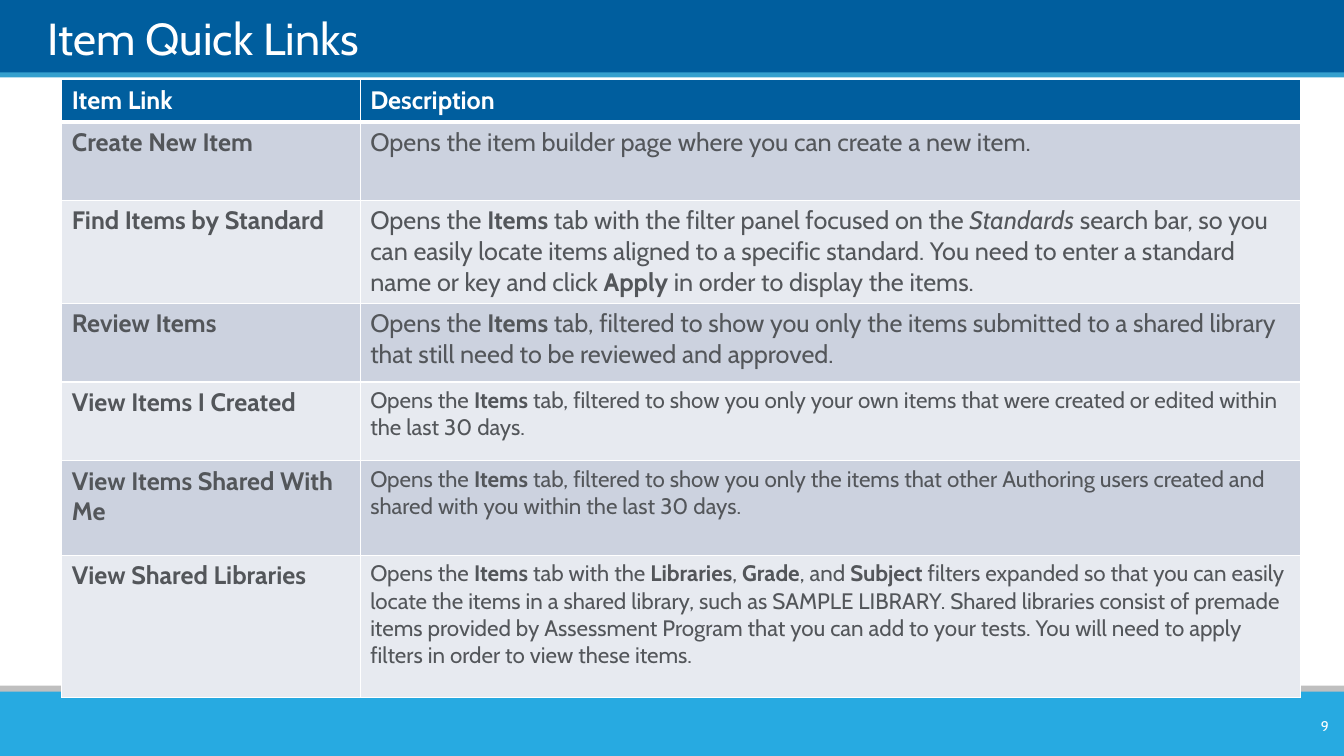
from dataclasses import dataclass

from lxml.etree import SubElement
from pptx import Presentation
from pptx.dml.color import RGBColor
from pptx.enum.shapes import MSO_SHAPE as Shape
from pptx.enum.text import MSO_ANCHOR as Anchor, MSO_AUTO_SIZE as AutoSize, PP_ALIGN as Align
from pptx.oxml.ns import qn
from pptx.util import Pt


@dataclass(frozen=True)
class Theme:
    font: str = "Cabin"
    white: str = "FFFFFF"
    navy: str = "005E9E"
    blue: str = "35A0CE"
    sky: str = "27AAE1"
    gray: str = "BFBFBF"
    ink: str = "53565A"
    row_fills: tuple[str, str] = ("CCD2DF", "E7EAF0")
    title: float = 32
    body: float = 18
    small: float = 16
    number: float = 10


@dataclass(frozen=True)
class Band:
    top: float
    height: float
    color: str


@dataclass(frozen=True)
class Span:
    text: str
    bold: bool = False
    italic: bool = False


@dataclass(frozen=True)
class LinkRow:
    name: str
    description: tuple[Span, ...]
    height: float
    size: float


T = Theme()
WIDTH, HEIGHT = 960, 540
COLUMNS = (213.1, 671.8)
HEADER_HEIGHT = 30.2
BANDS = (
    Band(-0.5, 54, T.navy),
    Band(51.7, 3.6, T.blue),
    Band(489.7, 10, T.gray),
    Band(494, 46, T.sky),
)
OPENS, ITEMS = Span("Opens the "), Span("Items", bold=True)
LINKS = (
    LinkRow("Create New Item", (
        Span("Opens the item builder page where you can create a new item."),
    ), 56.2, T.body),
    LinkRow("Find Items by Standard", (
        OPENS, ITEMS,
        Span(" tab with the filter panel focused on the "),
        Span("Standards", italic=True),
        Span(" search bar, so you can easily locate items aligned to a specific standard. "
             "You need to enter a standard name or key and click "),
        Span("Apply", bold=True),
        Span(" in order to display the items."),
    ), 73.4, T.body),
    LinkRow("Review Items", (
        OPENS, ITEMS,
        Span(" tab, filtered to show you only the items submitted to a shared library "
             "that still need to be reviewed and approved."),
    ), 56.2, T.body),
    LinkRow("View Items I Created", (
        OPENS, ITEMS,
        Span(" tab, filtered to show you only your own items that were created or edited "
             "within the last 30 days."),
    ), 56.2, T.small),
    LinkRow("View Items Shared With Me", (
        OPENS, ITEMS,
        Span(" tab, filtered to show you only the items that other Authoring users created "
             "and shared with you within the last 30 days."),
    ), 67.7, T.small),
    LinkRow("View Shared Libraries", (
        OPENS, ITEMS,
        Span(" tab with the "), Span("Libraries", bold=True),
        Span(", "), Span("Grade", bold=True),
        Span(", and "), Span("Subject", bold=True),
        Span(" filters expanded so that you can easily locate the items in a shared library, "
             "such as SAMPLE LIBRARY. Shared libraries consist of premade items provided by "
             "Assessment Program that you can add to your tests. You will need to apply "
             "filters in order to view these items."),
    ), 101.5, T.small),
)


def rgb(color: str) -> RGBColor:
    return RGBColor.from_string(color)


def write(p, text: str, *, size: float, color: str = T.white,
          bold: bool = False, italic: bool = False) -> None:
    r = p.add_run()
    r.text = text
    font = r.font
    font.name, font.size, font.bold, font.italic = T.font, Pt(size), bold, italic
    font.color.rgb = rgb(color)


def draw_band(s, band: Band) -> None:
    sp = s.shapes.add_shape(Shape.RECTANGLE, 0, Pt(band.top), Pt(WIDTH), Pt(band.height))
    sp.shadow.inherit = False
    sp.fill.solid()
    sp.fill.fore_color.rgb = rgb(band.color)
    sp.line.fill.background()


def draw_title(s, text: str) -> None:
    sp = s.shapes.title
    sp.element.getparent().append(sp.element)  # bring in front of the bands
    sp.left, sp.top, sp.width, sp.height = Pt(33.8), Pt(5), Pt(895), Pt(41)
    tf = sp.text_frame
    tf.auto_size = AutoSize.NONE
    tf.vertical_anchor = Anchor.BOTTOM
    tf.margin_left = tf.margin_top = tf.margin_right = tf.margin_bottom = 0
    p = tf.paragraphs[0]
    p.alignment = Align.LEFT
    write(p, text, size=T.title)


def style_cell(cell, fill: str, top: float = 1, bottom: float = 1) -> None:
    """Fill the cell and give it white borders."""
    tc_pr = cell._tc.get_or_add_tcPr()
    for side, width in (("L", 1), ("R", 1), ("T", top), ("B", bottom)):
        ln = SubElement(tc_pr, qn(f"a:ln{side}"), w=str(Pt(width)))
        SubElement(SubElement(ln, qn("a:solidFill")), qn("a:srgbClr"), val=T.white)
    cell.fill.solid()
    cell.fill.fore_color.rgb = rgb(fill)


def draw_links(s, headings: tuple[str, str], links: tuple[LinkRow, ...]) -> None:
    heights = (HEADER_HEIGHT, *(link.height for link in links))
    table = s.shapes.add_table(len(heights), len(COLUMNS), Pt(44.2), Pt(56.9),
                               Pt(sum(COLUMNS)), Pt(sum(heights))).table
    table.horz_banding = False
    for column, width in zip(table.columns, COLUMNS):
        column.width = Pt(width)
    for row, height in zip(table.rows, heights):
        row.height = Pt(height)
    for i, heading in enumerate(headings):
        cell = table.cell(0, i)
        style_cell(cell, T.navy, bottom=3)
        write(cell.text_frame.paragraphs[0], heading, size=T.body, bold=True)
    for i, link in enumerate(links):
        name, description = table.cell(i + 1, 0), table.cell(i + 1, 1)
        for cell in (name, description):
            style_cell(cell, T.row_fills[i % 2], top=1 if i else 3)
        write(name.text_frame.paragraphs[0], link.name, size=T.body, color=T.ink, bold=True)
        for span in link.description:
            write(description.text_frame.paragraphs[0], span.text, size=link.size,
                  color=T.ink, bold=span.bold, italic=span.italic)


def draw_number(s, number: str) -> None:
    tf = s.shapes.add_textbox(Pt(900.7), Pt(507.6), Pt(55.5), Pt(21.6)).text_frame
    tf.word_wrap = True
    tf.vertical_anchor = Anchor.MIDDLE
    p = tf.paragraphs[0]
    p.alignment = Align.RIGHT
    write(p, number, size=T.number)


def main() -> None:
    prs = Presentation()
    prs.slide_width, prs.slide_height = Pt(WIDTH), Pt(HEIGHT)
    s = prs.slides.add_slide(prs.slide_layouts.get_by_name("Title Only"))
    for band in BANDS:
        draw_band(s, band)
    draw_title(s, "Item Quick Links")
    draw_links(s, ("Item Link", "Description"), LINKS)
    draw_number(s, "9")
    prs.save("out.pptx")


if __name__ == "__main__":
    main()
